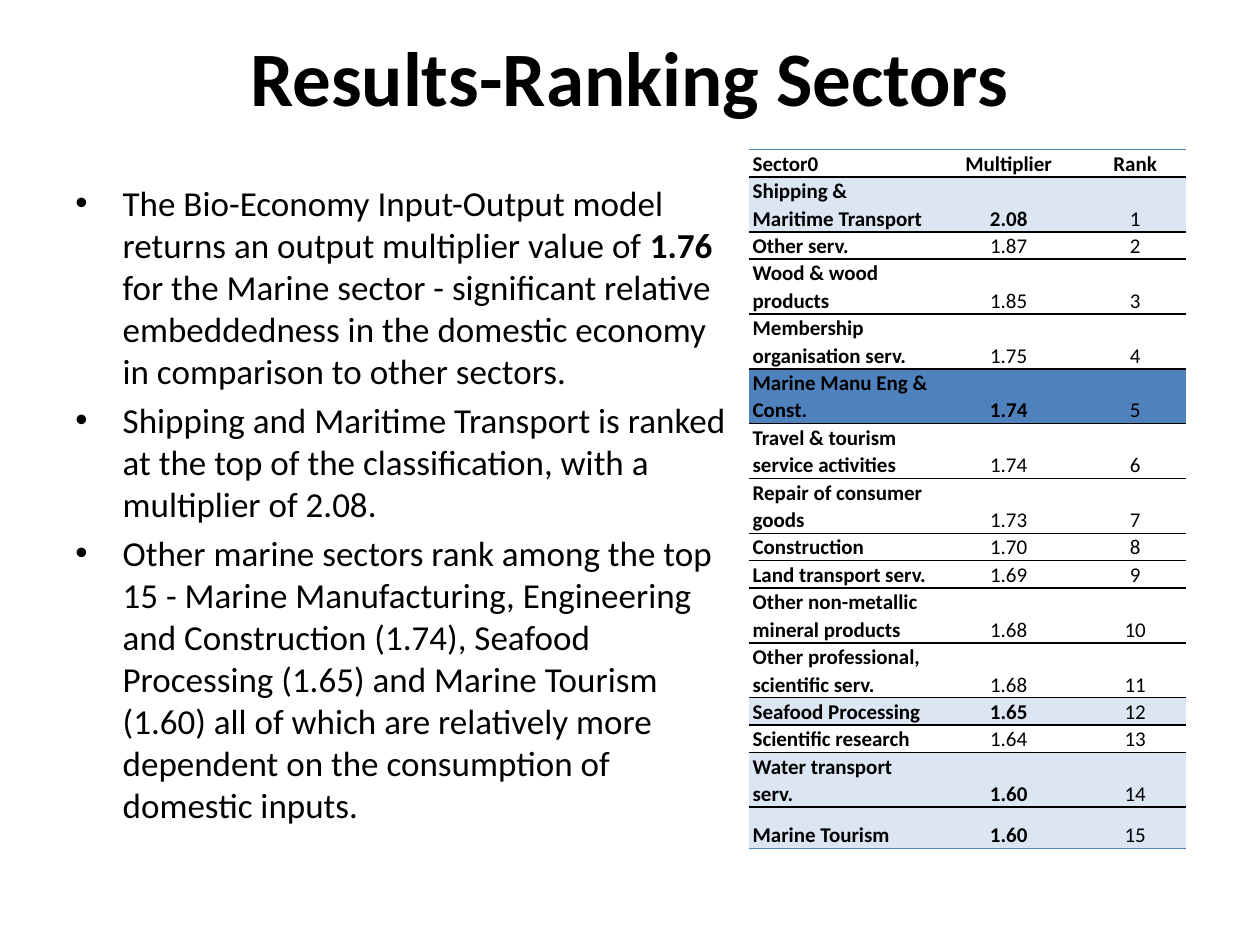
import dataclasses
import typing

import lxml.etree
import pptx
import pptx.dml.color
import pptx.enum.text
import pptx.oxml.ns
import pptx.util

Pt = pptx.util.Pt
RGBColor = pptx.dml.color.RGBColor
Align = pptx.enum.text.PP_ALIGN
Anchor = pptx.enum.text.MSO_ANCHOR

BLACK = RGBColor(0x00, 0x00, 0x00)
WHITE = RGBColor(0xFF, 0xFF, 0xFF)
PALE_BLUE = RGBColor(0xDC, 0xE6, 0xF2)
BLUE = RGBColor(0x4F, 0x81, 0xBD)

FONT = "Calibri"
LINE_HEIGHT = 15.67
LAST_ROW_HEIGHT = 23.5
COLUMN_WIDTHS = (105, 87, 57.6)


@dataclasses.dataclass(frozen=True)
class Sector:
    """One ranked sector with its multiplier and row shading."""

    name: str
    multiplier: str
    lines: int = 1
    shade: typing.Optional[RGBColor] = None
    opacity: int = 100

    @property
    def is_marine(self) -> bool:
        """Tell whether the row is highlighted as a marine sector."""
        return self.shade is not None


SECTORS = (
    Sector("Shipping & Maritime Transport", "2.08", 2, PALE_BLUE),
    Sector("Other serv.", "1.87"),
    Sector("Wood & wood products", "1.85", 2),
    Sector("Membership organisation serv.", "1.75", 2),
    Sector("Marine Manu Eng & Const.", "1.74", 2, BLUE, 20),
    Sector("Travel & tourism service activities", "1.74", 2),
    Sector("Repair of consumer goods", "1.73", 2),
    Sector("Construction", "1.70"),
    Sector("Land transport serv.", "1.69"),
    Sector("Other non-metallic mineral products", "1.68", 2),
    Sector("Other professional, scientific serv.", "1.68", 2),
    Sector("Seafood Processing", "1.65", 1, PALE_BLUE),
    Sector("Scientific research", "1.64"),
    Sector("Water transport serv.", "1.60", 2, PALE_BLUE),
    Sector("Marine Tourism", "1.60", 1, PALE_BLUE, 20),
)

FINDINGS = (
    (
        ("The Bio-Economy Input-Output model returns an output multiplier value of ", False),
        ("1.76", True),
        (" for the Marine sector - significant relative embeddedness in the domestic "
         "economy in comparison to other sectors.", False),
    ),
    (
        ("Shipping and Maritime Transport is ranked at the top of the classification, "
         "with a multiplier of 2.08.", False),
    ),
    (
        ("Other marine sectors rank among the top 15 - Marine Manufacturing, Engineering "
         "and Construction (1.74), Seafood Processing (1.65) and Marine Tourism (1.60) all "
         "of which are relatively more dependent on the consumption of domestic inputs.", False),
    ),
)


def add_element(parent, tag: str, **attributes: str):
    """Append a DrawingML element to a parent and return it."""
    return lxml.etree.SubElement(parent, pptx.oxml.ns.qn(tag), attributes)


def set_font(paragraph, size: float, bold: typing.Optional[bool] = None) -> None:
    """Give a paragraph the slide's typeface."""
    font = paragraph.font
    font.name, font.size, font.bold = FONT, Pt(size), bold
    font.color.rgb = BLACK


def draw_title(slide, title: str) -> None:
    """Draw the centred slide title."""
    frame = slide.shapes.add_textbox(Pt(36), Pt(-2), Pt(648), Pt(90)).text_frame
    frame.word_wrap = True
    frame.vertical_anchor = Anchor.MIDDLE
    heading = frame.paragraphs[0]
    heading.text = title
    heading.alignment = Align.CENTER
    set_font(heading, 44, True)


def draw_findings(slide) -> None:
    """Draw the bulleted findings."""
    frame = slide.shapes.add_textbox(Pt(36), Pt(100), Pt(392), Pt(356.4)).text_frame
    frame.word_wrap = True
    for index, finding in enumerate(FINDINGS):
        paragraph = frame.add_paragraph() if index else frame.paragraphs[0]
        if index:
            paragraph.space_before = Pt(4)
        properties = paragraph._p.get_or_add_pPr()
        properties.set("marL", str(Pt(27)))
        properties.set("indent", str(Pt(-27)))
        add_element(properties, "a:buFont", typeface="Arial")
        add_element(properties, "a:buChar", char="•")
        set_font(paragraph, 20)
        for text, bold in finding:
            run = paragraph.add_run()
            run.text = text
            if bold:
                run.font.bold = True


def set_borders(cell, top: RGBColor, bottom: RGBColor) -> None:
    """Rule a cell above and below, leaving its sides open."""
    properties = cell._tc.get_or_add_tcPr()
    for side, color in (("L", None), ("R", None), ("T", top), ("B", bottom)):
        line = add_element(properties, f"a:ln{side}", w=str(Pt(1)))
        if color is None:
            add_element(line, "a:noFill")
        else:
            add_element(add_element(line, "a:solidFill"), "a:srgbClr", val=str(color))


def set_shade(cell, shade: typing.Optional[RGBColor], opacity: int) -> None:
    """Fill a cell, or leave it clear when it has no shade."""
    if shade is None:
        cell.fill.background()
        return
    cell.fill.solid()
    cell.fill.fore_color.rgb = shade
    if opacity < 100:
        color = cell._tc.tcPr.find(".//" + pptx.oxml.ns.qn("a:srgbClr"))
        add_element(color, "a:alpha", val=str(opacity * 1000))


def write_cell(cell, text: str, bold: bool, alignment) -> None:
    """Write one bottom-anchored table entry."""
    cell.vertical_anchor = Anchor.BOTTOM
    cell.margin_left = cell.margin_right = Pt(2.2)
    cell.margin_top = cell.margin_bottom = Pt(0)
    entry = cell.text_frame.paragraphs[0]
    entry.text = text
    entry.alignment = alignment
    entry.line_spacing = 1.07
    entry.space_after = Pt(8)
    set_font(entry, 12, bold)


def draw_ranking(slide) -> None:
    """Draw the table of sectors ranked by multiplier."""
    rows = [(Sector("Sector0", "Multiplier", shade=WHITE), "Rank")]
    rows += [(sector, str(rank)) for rank, sector in enumerate(SECTORS, 1)]
    last = len(rows) - 1
    heights = [sector.lines * LINE_HEIGHT for sector, _ in rows[:-1]] + [LAST_ROW_HEIGHT]
    ranking = slide.shapes.add_table(
        len(rows), len(COLUMN_WIDTHS), Pt(427.9), Pt(85.5),
        Pt(sum(COLUMN_WIDTHS)), Pt(sum(heights)),
    ).table
    ranking.first_row = ranking.horz_banding = False
    for column, width in zip(ranking.columns, COLUMN_WIDTHS):
        column.width = Pt(width)
    for index, (sector, rank) in enumerate(rows):
        ranking.rows[index].height = Pt(heights[index])
        entries = (
            (sector.name, True, Align.LEFT),
            (sector.multiplier, sector.is_marine, Align.CENTER),
            (rank, index == 0, Align.CENTER),
        )
        for column, entry in enumerate(entries):
            cell = ranking.cell(index, column)
            write_cell(cell, *entry)
            set_borders(cell, BLUE if index == 0 else BLACK, BLUE if index == last else BLACK)
            set_shade(cell, sector.shade, sector.opacity)


def main() -> None:
    """Build and save the slide."""
    deck = pptx.Presentation()
    deck.slide_width, deck.slide_height = Pt(720), Pt(540)
    slide = deck.slides.add_slide(deck.slide_layouts[6])
    draw_title(slide, "Results-Ranking Sectors")
    draw_findings(slide)
    draw_ranking(slide)
    deck.save("out.pptx")


if __name__ == "__main__":
    main()
